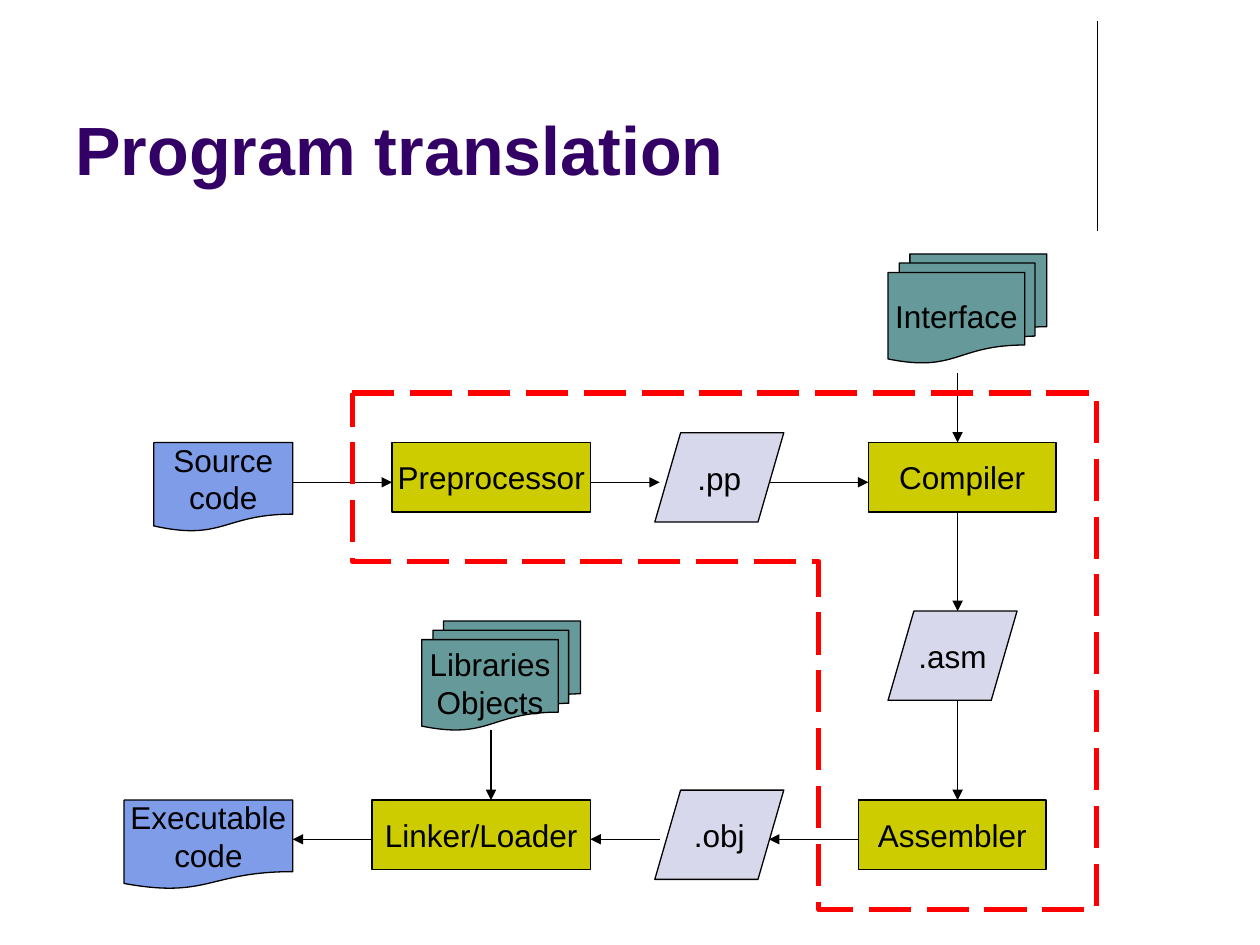
import pptx
import pptx.util
import pptx.dml.color
import pptx.enum.dml
import pptx.enum.shapes
import pptx.enum.text
import pptx.oxml
import pptx.oxml.ns
from lxml import etree

Pt = pptx.util.Pt
RGBColor = pptx.dml.color.RGBColor
Shape = pptx.enum.shapes.MSO_SHAPE
Anchor = pptx.enum.text.MSO_ANCHOR
Align = pptx.enum.text.PP_ALIGN

BLACK = RGBColor(0x00, 0x00, 0x00)
PURPLE = RGBColor(0x33, 0x00, 0x66)
OLIVE = RGBColor(0xCC, 0xCC, 0x00)
TEAL = RGBColor(0x66, 0x99, 0x99)
BLUE = RGBColor(0x7E, 0x9C, 0xE8)
LAVENDER = RGBColor(0xD8, 0xD8, 0xEC)
RED = RGBColor(0xFF, 0x00, 0x00)


def write_text(box, text, size=18, color=BLACK, bold=False, align=Align.CENTER,
               anchor=Anchor.MIDDLE, wrap=False):
    """Fill a box with one paragraph; a newline becomes a line break."""
    frame = box.text_frame
    frame.word_wrap = wrap
    frame.vertical_anchor = anchor
    para = frame.paragraphs[0]
    para.alignment = align
    for index, line in enumerate(text.split("\n")):
        if index:
            para.add_line_break()
        span = para.add_run()
        span.text = line
        span.font.name = "Arial"
        span.font.size = Pt(size)
        span.font.bold = bold
        span.font.color.rgb = color


class FlowPage:
    line_width = 0.75

    def __init__(self, deck):
        self.page = deck.slides.add_slide(deck.slide_layouts[6])

    def title(self, text, left, top, width, height):
        box = self.page.shapes.add_textbox(Pt(left), Pt(top), Pt(width), Pt(height))
        write_text(box, text, size=39, color=PURPLE, bold=True, align=Align.LEFT,
                   anchor=Anchor.BOTTOM, wrap=True)

    def node(self, kind, fill, text, left, top, width, height):
        box = self.page.shapes.add_shape(kind, Pt(left), Pt(top), Pt(width), Pt(height))
        box.shadow.inherit = False
        box.fill.solid()
        box.fill.fore_color.rgb = fill
        box.line.color.rgb = BLACK
        box.line.width = Pt(self.line_width)
        write_text(box, text)

    def line(self, x1, y1, x2, y2, arrow=True):
        line = self.page.shapes.add_connector(
            pptx.enum.shapes.MSO_CONNECTOR.STRAIGHT, Pt(x1), Pt(y1), Pt(x2), Pt(y2))
        line.line.color.rgb = BLACK
        line.line.width = Pt(self.line_width)
        if arrow:
            etree.SubElement(line.line._get_or_add_ln(),
                             pptx.oxml.ns.qn("a:tailEnd"), type="triangle")
        etree.SubElement(line._element.spPr, pptx.oxml.ns.qn("a:effectLst"))

    def dashed_outline(self, points):
        corners = [(Pt(x), Pt(y)) for x, y in points]
        builder = self.page.shapes.build_freeform(*corners[0], scale=1.0)
        builder.add_line_segments(corners[1:], close=True)
        outline = builder.convert_to_shape()
        outline.shadow.inherit = False
        outline.fill.background()
        outline.line.color.rgb = RED
        outline.line.width = Pt(3)
        outline.line.dash_style = pptx.enum.dml.MSO_LINE.LONG_DASH


def main():
    deck = pptx.Presentation()
    deck.slide_width, deck.slide_height = Pt(720), Pt(540)
    flow = FlowPage(deck)

    # Heading and its rule
    flow.line(627, 12, 627, 132, arrow=False)
    flow.title("Program translation", 36, 9.5, 594, 102)

    # Tools: left, top, width
    upper, lower = 252.9, 457.2
    for text, left, top, width in [
        ("Preprocessor", 224, upper, 113.4),
        ("Compiler", 496.2, upper, 107.3),
        ("Assembler", 490.5, lower, 107.3),
        ("Linker/Loader", 212.6, lower, 124.7),
    ]:
        flow.node(Shape.RECTANGLE, OLIVE, text, left, top, width, 39.7)

    # Stacked inputs
    for text, left, top in [("Libraries\nObjects", 241, 354.9), ("Interface", 507.5, 145.1)]:
        flow.node(Shape.FLOWCHART_MULTIDOCUMENT, TEAL, text, left, top, 90.7, 62.4)

    # First and last files, with a shared right edge
    files_right = 167.3
    for text, top, width in [("Source\ncode", upper, 79.4), ("Executable\ncode", lower, 96.4)]:
        flow.node(Shape.FLOWCHART_DOCUMENT, BLUE, text, files_right - width, top, width, 51)

    # Intermediate files
    for text, left, top in [(".pp", 374.2, 247.3), (".asm", 507.5, 349.2), (".obj", 374.2, 451.5)]:
        flow.node(Shape.FLOWCHART_DATA, LAVENDER, text, left, top, 73.7, 51)

    # Horizontal flow: right along the upper row, left along the lower one
    for y, spans in [
        (275.6, [(files_right, 224), (337.4, 377), (439.4, 496.2)]),
        (479.6, [(490.5, 439.4), (377, 337.4), (212.6, files_right)]),
    ]:
        for start, end in spans:
            flow.line(start, y, end, y)

    # Vertical flow
    for x, start, end in [
        (547.2, 213.2, upper),
        (547.2, 292.8, 349.2),
        (547.2, 400.3, lower),
        (280.6, 417.4, lower),
    ]:
        flow.line(x, start, x, end)

    # Boundary around the compilation steps
    flow.dashed_outline([(201.4, 224.6), (626.6, 224.6), (626.6, 519.6),
                         (467.8, 519.6), (467.8, 320.9), (201.4, 320.9)])

    deck.save("out.pptx")


if __name__ == "__main__":
    main()
